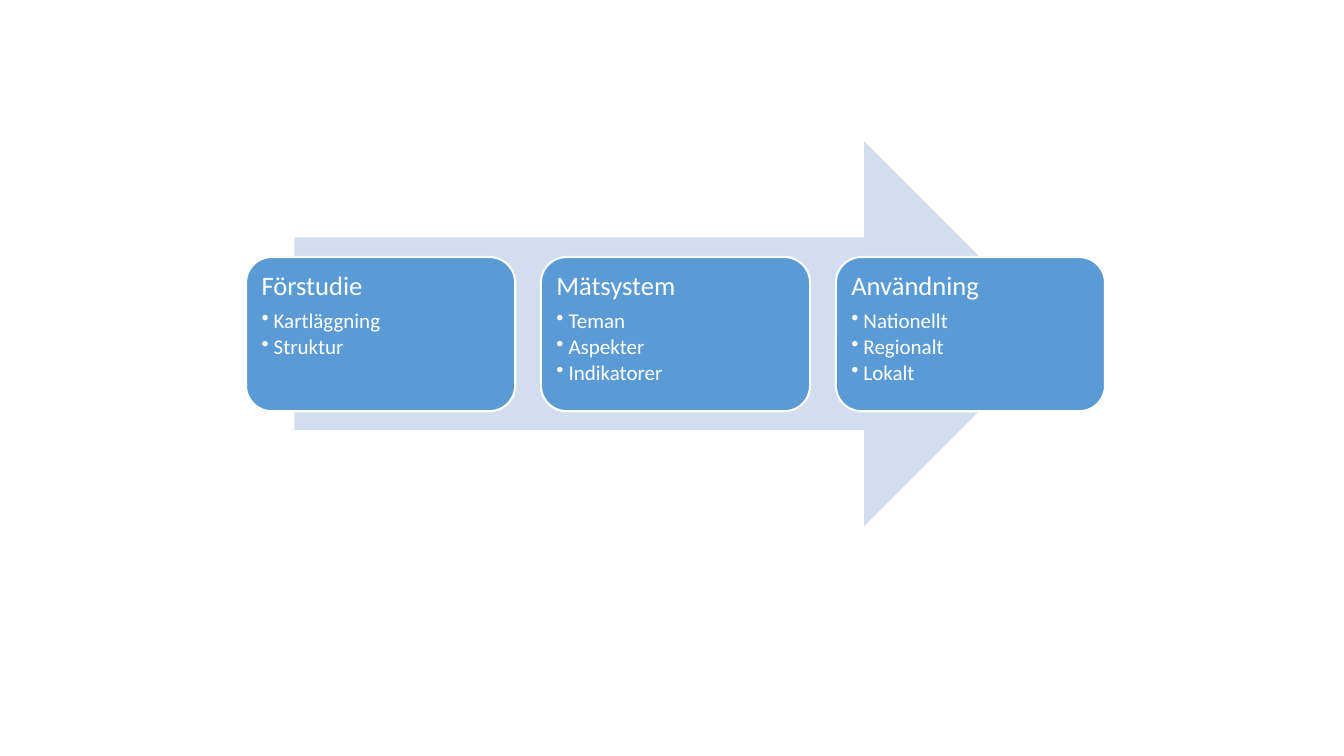
import pptx
import pptx.util
import pptx.dml.color
import pptx.enum.shapes
import pptx.enum.text
import lxml.etree

# Content
STAGES = [
    ("Förstudie", ["Kartläggning", "Struktur"]),
    ("Mätsystem", ["Teman", "Aspekter", "Indikatorer"]),
    ("Användning", ["Nationellt", "Regionalt", "Lokalt"]),
]

# Theme: colours and type
THEME = {
    "arrow": "D2DEEF", "card": "5B9BD5", "white": "FFFFFF",
    "font": "Calibri", "head": 19, "item": 15, "edge": 1.5,
}

# Layout, in inches
ARROW = (2.92, 1.4, 7.56, 3.82)
FIRST, LAST, TOP = 2.44, 8.29, 2.55
WIDE, HIGH = 2.67, 1.53
STEP = (LAST - FIRST) / (len(STAGES) - 1)
INSET, HANG = 0.08, 0.12

Inches, Pt = pptx.util.Inches, pptx.util.Pt
KIND = pptx.enum.shapes.MSO_SHAPE


def tint(name):
    return pptx.dml.color.RGBColor.from_string(THEME[name])


def style(thing, values):
    for name, value in values.items():
        setattr(thing, name, value)


def add_form(slide, kind, box, fill):
    form = slide.shapes.add_shape(kind, *map(Inches, box))
    form.shadow.inherit = False
    form.fill.solid()
    form.fill.fore_color.rgb = tint(fill)
    return form


def add_line(para, text, size, after):
    style(para, {"alignment": pptx.enum.text.PP_ALIGN.LEFT,
                 "line_spacing": 0.9, "space_after": Pt(size * after)})
    run = para.add_run()
    run.text = text
    style(run.font, {"name": THEME["font"], "size": Pt(size)})
    run.font.color.rgb = tint("white")


def add_bullet(para):
    para.level = 1
    props = para._p.get_or_add_pPr()
    props.set("marL", str(Inches(HANG)))
    props.set("indent", str(-Inches(HANG)))
    mark = lxml.etree.SubElement(props, pptx.oxml.ns.qn("a:buChar"))
    mark.set("char", "•")


def add_card(slide, left, title, items):
    card = add_form(slide, KIND.ROUNDED_RECTANGLE,
                    (left, TOP, WIDE, HIGH), "card")
    card.line.color.rgb = tint("white")
    card.line.width = Pt(THEME["edge"])
    frame = card.text_frame
    style(frame, {"word_wrap": True,
                  "vertical_anchor": pptx.enum.text.MSO_ANCHOR.TOP})
    sides = ("left", "top", "right", "bottom")
    style(frame, {f"margin_{side}": Inches(INSET) for side in sides})
    add_line(frame.paragraphs[0], title, THEME["head"], 0.35)
    for item in items:
        para = frame.add_paragraph()
        add_line(para, item, THEME["item"], 0.15)
        add_bullet(para)


def main():
    deck = pptx.Presentation()
    style(deck, {"slide_width": Inches(13.33), "slide_height": Inches(7.5)})
    slide = deck.slides.add_slide(deck.slide_layouts[6])

    # Arrow behind the stages
    arrow = add_form(slide, KIND.RIGHT_ARROW, ARROW, "arrow")
    arrow.line.fill.background()

    # Stage cards
    for spot, (title, items) in enumerate(STAGES):
        add_card(slide, FIRST + spot * STEP, title, items)

    deck.save("out.pptx")


if __name__ == "__main__":
    main()
